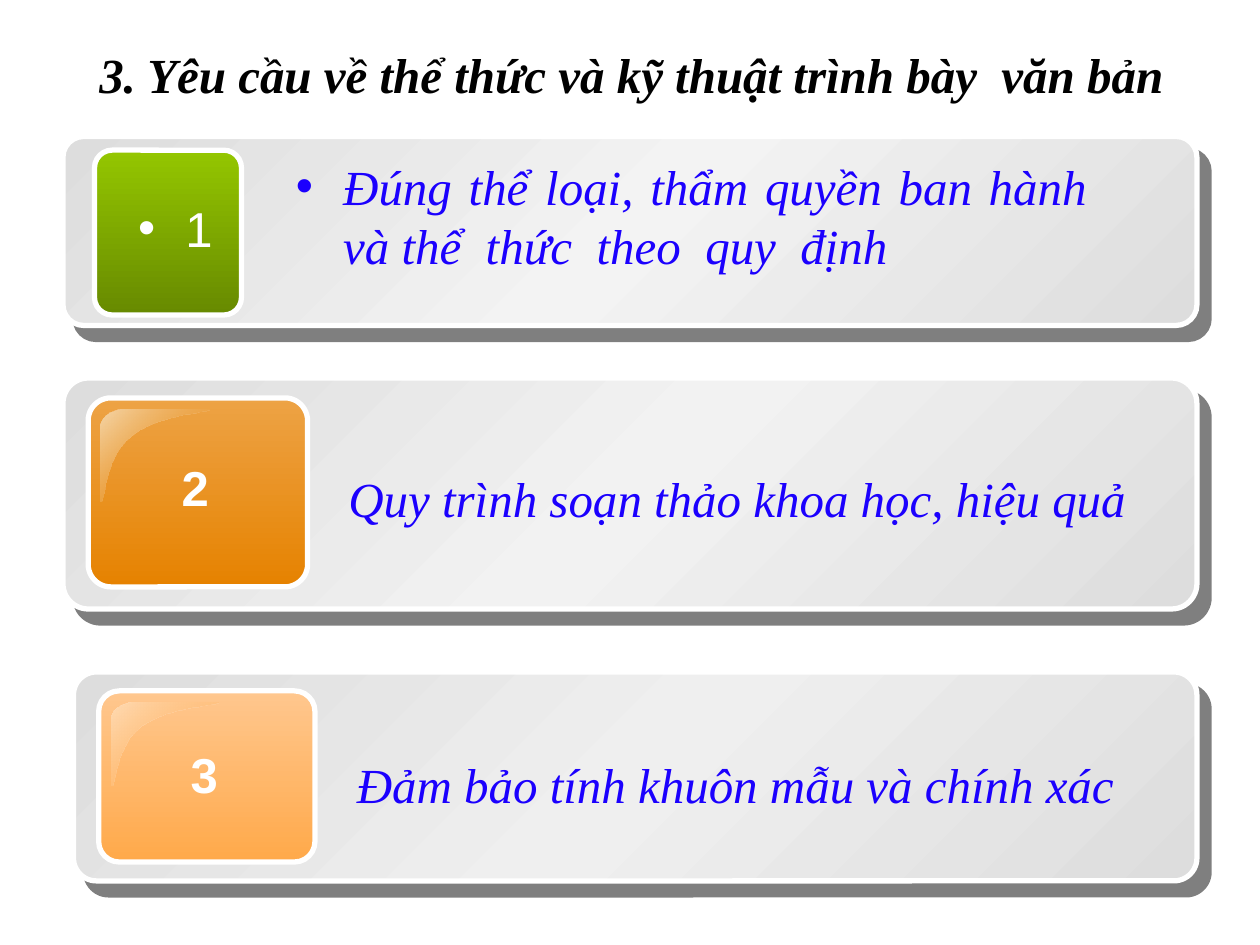
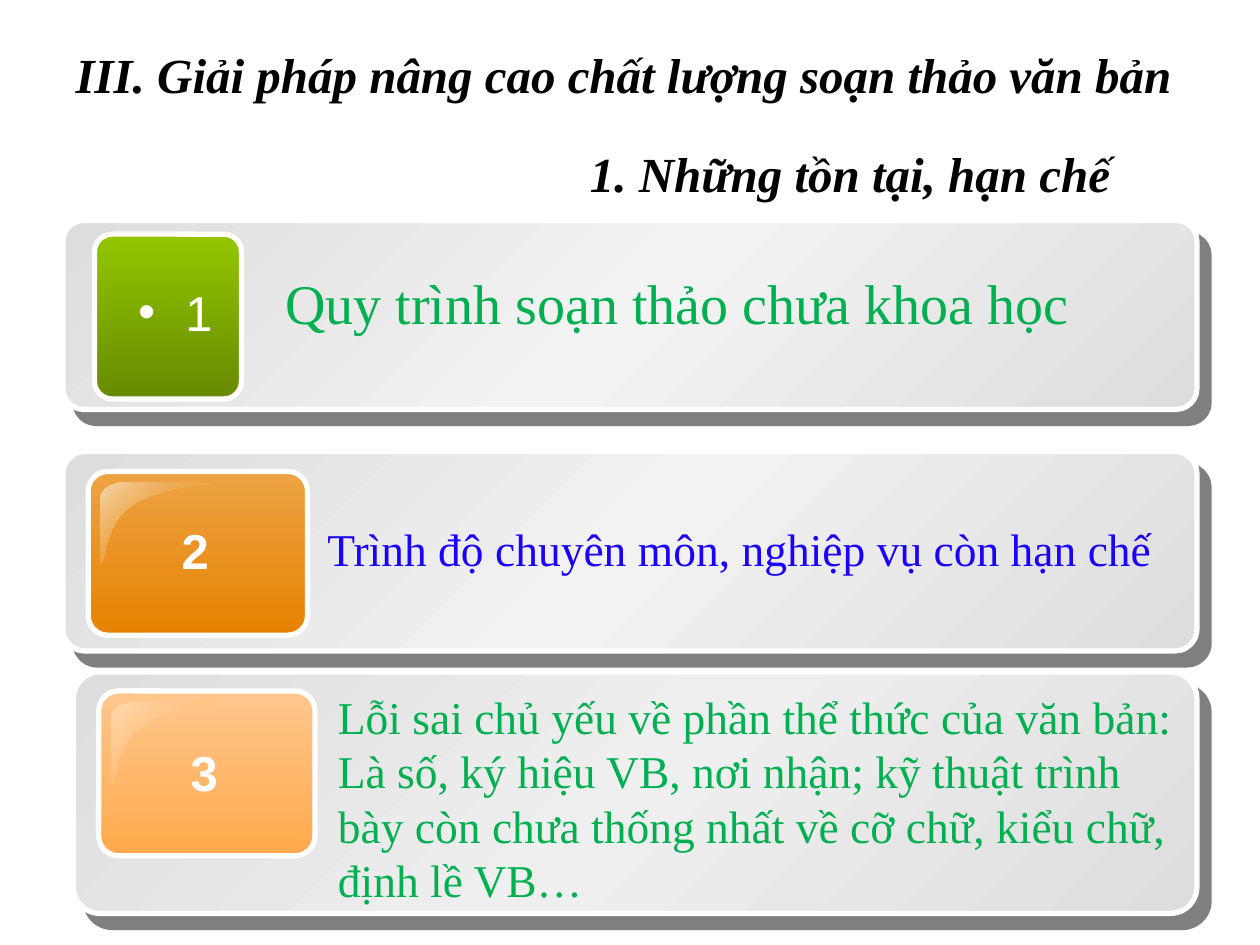
from dataclasses import dataclass
from lxml.etree import SubElement
from pptx import Presentation
from pptx.dml.color import RGBColor
from pptx.enum.shapes import MSO_SHAPE as Shape
from pptx.enum.text import MSO_ANCHOR as Anchor, MSO_AUTO_SIZE as AutoSize, PP_ALIGN as Align
from pptx.oxml.ns import qn
from pptx.util import Inches, Pt


@dataclass(frozen=True)
class Theme:
    serif: str = "Times New Roman"
    sans: str = "Arial"
    black: str = "000000"
    white: str = "FFFFFF"
    blue: str = "1B00FE"
    green: str = "00B050"
    panel_edge: str = "DDDDDD"
    panel_middles: tuple = ("F3F3F3", "F2F2F2", "EFEFEF")
    badges: tuple = (("94C600", "678A00"), ("EDA345", "E68200"), ("FFC78E", "FFA94A"))
    glosses: tuple = (None, "F5D6A9", "FFDBB3")
    small: int = 26
    normal: int = 28
    large: int = 32
    outline: int = 3


theme = Theme()
deck = Presentation()
deck.slide_width, deck.slide_height = Inches(10), Inches(7.5)
column, row = deck.slide_width / 120, deck.slide_height / 90


def paint(shape, stops, angle):
    shape.shadow.inherit = False
    shape.fill.gradient()
    shape.fill.gradient_angle = 360 - angle
    stop_list = shape._element.spPr.find(qn("a:gradFill")).find(qn("a:gsLst"))
    stop_list.clear()
    for position, color, alpha in stops:
        stop = SubElement(stop_list, qn("a:gs"), pos=str(position * 1000))
        tone = SubElement(stop, qn("a:srgbClr"), val=color)
        SubElement(tone, qn("a:alpha"), val=str(alpha * 1000))


def write(box, text, size, color, face, align=Align.LEFT, bold=False, italic=False, bullet=False):
    frame = box.text_frame
    frame.text = text
    frame.word_wrap = True
    frame.auto_size = AutoSize.NONE
    para = frame.paragraphs[0]
    para.alignment = align
    if bullet:
        properties = para._p.get_or_add_pPr()
        properties.set("marL", str(Inches(0.375)))
        properties.set("indent", str(-Inches(0.375)))
        SubElement(properties, qn("a:buFont"), typeface=theme.sans)
        SubElement(properties, qn("a:buChar"), char="•")
    for span in para.runs:
        span.font.name, span.font.size = face, Pt(size)
        span.font.bold, span.font.italic = bold, italic
        span.font.color.rgb = RGBColor.from_string(color)


gloss_start = (0.21, 0)
gloss_curves = [
    ((0.21, 0), (0.1, 0), (0, 0.08), (0, 0.19)),
    ((0, 0.97), (0.05, 1), (0.02, 0.51), (0.28, 0.28)),
    ((0.28, 0.28), (0.52, 0.05), (1, 0.04), (0.99, 0)),
]
steps = 12
gloss_outline = [
    tuple(
        (1 - t) ** 3 * a + 3 * (1 - t) ** 2 * t * b + 3 * (1 - t) * t ** 2 * c + t ** 3 * d
        for a, b, c, d in zip(*curve)
    )
    for curve in gloss_curves
    for t in (step / steps for step in range(steps + 1))
]

panel_lefts = (6, 6, 7)
badge_lefts = (9, 8.4, 9.4)
badge_widths = (14, 20.9, 20.6)
badge_drops = (1.3, 1.9, 1.8)
number_offsets = (2, 6.5, 6.4)
number_widths = (11.4, 7.4, 7.3)
panel_right = 114

pages = [
    {
        "title": ("3. Yêu cầu về thể thức và kỹ thuật trình bày  văn bản", 106, Align.RIGHT),
        "panels": [(13, 18, 15.7, 5.3), (36, 22, 18, 7), (64, 19.9, 16.3, 6.3)],
        "items": [
            ("Đúng thể loại, thẩm quyền ban hành  và thể  thức  theo  quy  định",
             (27, 14.3, 79.3, 12.6), theme.normal, theme.blue, Align.JUSTIFY, True, True),
            ("Quy trình soạn thảo khoa học, hiệu quả",
             (32, 44, 79.3, 7.9), theme.normal, theme.blue, Align.LEFT, True, False),
            ("Đảm bảo tính khuôn mẫu và chính xác",
             (32.8, 71.3, 78.6, 8.4), theme.normal, theme.blue, Align.LEFT, True, False),
        ],
    },
    {
        "title": ("III. Giải pháp nâng cao chất lượng soạn thảo văn bản", 111, Align.LEFT),
        "subtitle": "1. Những tồn tại, hạn chế",
        "panels": [(21, 18, 15.7, 5.3), (43, 19, 15.6, 6), (64, 23, 15.7, 6.1)],
        "items": [
            ("Quy trình soạn thảo chưa khoa học",
             (26, 25, 84, 7.7), theme.large, theme.green, Align.LEFT, False, False),
            ("Trình độ chuyên môn, nghiệp vụ còn hạn chế",
             (30, 49, 81.4, 6.5), theme.small, theme.blue, Align.LEFT, False, False),
            ("Lỗi sai chủ yếu về phần thể thức của văn bản: Là số, ký hiệu VB, nơi nhận; "
             "kỹ thuật trình bày còn chưa thống nhất về cỡ chữ, kiểu chữ, định lề VB…",
             (31, 65, 82, 22.2), theme.small, theme.green, Align.LEFT, False, False),
        ],
    },
]

for content in pages:
    page = deck.slides.add_slide(deck.slide_layouts[5])
    heading, heading_width, heading_align = content["title"]
    title = page.shapes.title
    title.left, title.top = int(6 * column), int(2 * row)
    title.width, title.height = int(heading_width * column), int(10 * row)
    write(title, heading, theme.normal, theme.black, theme.serif, heading_align, True, True)
    title.text_frame.vertical_anchor = Anchor.MIDDLE

    for index, (top, height, badge_height, number_drop) in enumerate(content["panels"]):
        left, badge_left = panel_lefts[index], badge_lefts[index]
        badge_top, badge_width = top + badge_drops[index], badge_widths[index]
        panel = page.shapes.add_shape(
            Shape.ROUNDED_RECTANGLE, int(left * column), int(top * row),
            int((panel_right - left) * column), int(height * row))
        badge = page.shapes.add_shape(
            Shape.ROUNDED_RECTANGLE, int(badge_left * column), int(badge_top * row),
            int(badge_width * column), int(badge_height * row))
        first, last = theme.badges[index]
        paint(panel, [(0, theme.panel_edge, 100), (50, theme.panel_middles[index], 100),
                      (100, theme.panel_edge, 100)], 45)
        paint(badge, [(0, first, 100), (100, last, 100)], 90)
        for card, corner in ((panel, 0.11), (badge, 0.12)):
            card.adjustments[0] = corner
            card.line.color.rgb = RGBColor.from_string(theme.white)
            card.line.width = Pt(theme.outline)
        effects = panel._element.spPr.find(qn("a:effectLst"))
        shadow = SubElement(effects, qn("a:outerShdw"), blurRad="0", dist=str(Pt(10.6)),
                            dir=str(49 * 60000), algn="ctr", rotWithShape="0")
        shade = SubElement(shadow, qn("a:srgbClr"), val=theme.black)
        SubElement(shade, qn("a:alpha"), val="50000")

        if theme.glosses[index]:
            gloss_left, gloss_top = badge_left + 1.2, badge_top + 1.1
            points = [
                (int((gloss_left + x * badge_width / 2) * column),
                 int((gloss_top + y * badge_height / 2) * row))
                for x, y in [gloss_start] + gloss_outline
            ]
            builder = page.shapes.build_freeform(*points[0])
            builder.add_line_segments(points[1:], close=True)
            gloss = builder.convert_to_shape()
            paint(gloss, [(0, theme.glosses[index], 100), (100, last, 0)], 45)
            gloss.line.fill.background()

        number = page.shapes.add_textbox(
            int((badge_left + number_offsets[index]) * column), int((top + number_drop) * row),
            int(number_widths[index] * column), int(8 * row))
        write(number, str(index + 1), theme.normal, theme.white, theme.sans, Align.CENTER,
              bold=index > 0, bullet=index == 0)

    for text, (left, top, width, height), size, color, align, italic, bullet in content["items"]:
        item = page.shapes.add_textbox(
            int(left * column), int(top * row), int(width * column), int(height * row))
        write(item, text, size, color, theme.serif, align, italic=italic, bullet=bullet)

    if "subtitle" in content:
        subtitle = page.shapes.add_textbox(
            int(55 * column), int(12 * row), int(60 * column), int(9 * row))
        write(subtitle, content["subtitle"], theme.normal, theme.black, theme.serif,
              bold=True, italic=True)
        subtitle.text_frame.vertical_anchor = Anchor.MIDDLE

deck.save("out.pptx")
